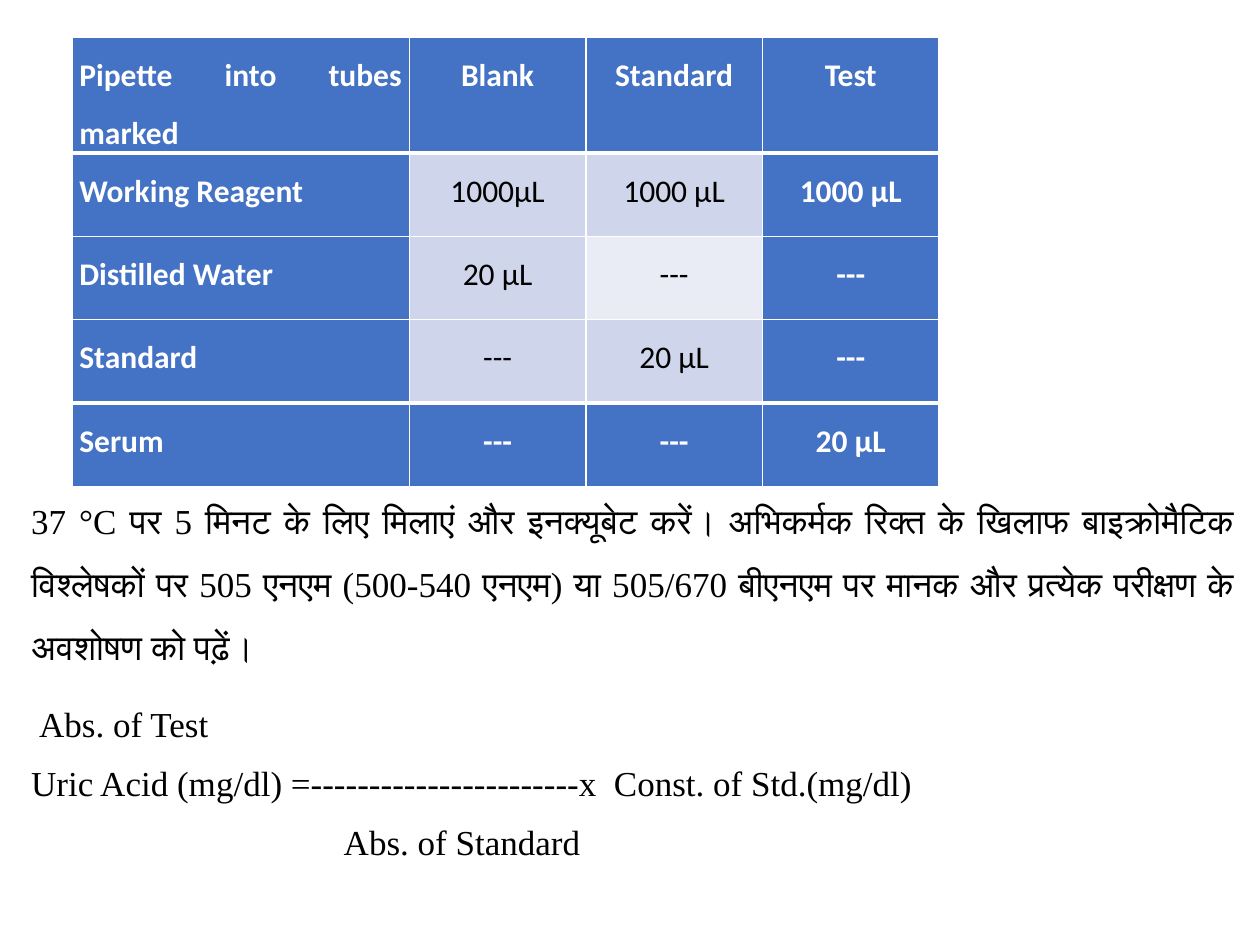
from dataclasses import dataclass

from lxml.etree import SubElement
from pptx import Presentation
from pptx.dml.color import RGBColor
from pptx.enum.text import MSO_ANCHOR, PP_ALIGN as Align
from pptx.oxml.ns import qn
from pptx.slide import Slide
from pptx.util import Cm, Pt

COLORS = {
    "header": "4472C4",
    "band": "CFD5EA",
    "plain": "E9EBF5",
    "white": "FFFFFF",
    "black": "000000",
}

ASSAY_ROWS = [
    ["Pipette into tubes marked", "Blank", "Standard", "Test"],
    ["Working Reagent", "1000µL", "1000 µL", "1000 µL"],
    ["Distilled Water", "20 µL", "---", "---"],
    ["Standard", "---", "20 µL", "---"],
    ["Serum", "---", "---", "20 µL"],
]

INSTRUCTIONS = [
    ("37 °C पर 5 मिनट के लिए मिलाएं और इनक्यूबेट करें। अभिकर्मक रिक्त के खिलाफ "
     "बाइक्रोमैटिक विश्लेषकों पर 505 एनएम (500-540 एनएम) या 505/670 बीएनएम पर "
     "मानक और प्रत्येक परीक्षण के अवशोषण को पढ़ें।", 1.5, 0),
    ("Abs. of Test", 1.5, 0.16),
    ("Uric Acid (mg/dl) =-----------------------x  Const. of Std.(mg/dl)", 1.07, 0),
    ("Abs. of Standard", 1.07, 6.3),
]


@dataclass
class SlideBuilder:
    """Hold the style and the current slide, and add elements to it."""

    slide: Slide
    table_font: str = "Calibri"
    text_font: str = "Times New Roman"
    table_size: int = 18
    text_size: int = 20
    space_after: int = 8

    def style(self, paragraph, font, size, color, align, spacing, bold=False):
        paragraph.alignment = align
        paragraph.line_spacing = spacing
        paragraph.space_after = Pt(self.space_after)
        paragraph.font.name = font
        paragraph.font.size = Pt(size)
        paragraph.font.bold = bold
        paragraph.font.color.rgb = RGBColor.from_string(COLORS[color])

    def borders(self, cell, top, bottom):
        properties = cell._tc.get_or_add_tcPr()
        for side, width in (("L", 1), ("R", 1), ("T", top), ("B", bottom)):
            line = SubElement(properties, qn(f"a:ln{side}"), w=str(Pt(width)))
            fill = SubElement(line, qn("a:solidFill"))
            SubElement(fill, qn("a:srgbClr"), val=COLORS["white"])

    def cell(self, cell, text, fill, align, top, bottom):
        is_header = fill == "header"
        cell.margin_left = cell.margin_right = Cm(0.15)
        cell.margin_top = cell.margin_bottom = 0
        cell.vertical_anchor = MSO_ANCHOR.TOP
        self.borders(cell, top, bottom)
        cell.fill.solid()
        cell.fill.fore_color.rgb = RGBColor.from_string(COLORS[fill])
        paragraph = cell.text_frame.paragraphs[0]
        paragraph.text = text
        self.style(paragraph, self.table_font, self.table_size,
                   "white" if is_header else "black", align, 1.5, is_header)

    def table(self, rows, left, top, widths, row_height):
        last_row, last_column = len(rows) - 1, len(widths) - 1
        table = self.slide.shapes.add_table(
            len(rows), len(widths), Cm(left), Cm(top),
            Cm(sum(widths)), Cm(row_height * len(rows))).table
        table.last_row = table.first_col = table.last_col = True
        for column, width in zip(table.columns, widths):
            column.width = Cm(width)
        for i, texts in enumerate(rows):
            table.rows[i].height = Cm(row_height)
            top_width = 3 if i in (1, last_row) else 1
            bottom_width = 3 if i in (0, last_row - 1) else 1
            for j, text in enumerate(texts):
                if i in (0, last_row) or j in (0, last_column):
                    fill = "header"
                else:
                    fill = "plain" if (i, j) == (2, 2) else "band"
                align = Align.CENTER if j else Align.JUSTIFY
                self.cell(table.cell(i, j), text, fill, align, top_width, bottom_width)

    def text(self, lines, left, top, width, height):
        frame = self.slide.shapes.add_textbox(
            Cm(left), Cm(top), Cm(width), Cm(height)).text_frame
        frame.word_wrap = True
        for i, (text, spacing, indent) in enumerate(lines):
            paragraph = frame.add_paragraph() if i else frame.paragraphs[0]
            paragraph.text = text
            if indent:
                paragraph._p.get_or_add_pPr().set("marL", str(Cm(indent)))
            self.style(paragraph, self.text_font, self.text_size,
                       "black", Align.JUSTIFY, spacing)


def main():
    presentation = Presentation()
    presentation.slide_width, presentation.slide_height = Cm(25.4), Cm(19.05)
    builder = SlideBuilder(presentation.slides.add_slide(presentation.slide_layouts[6]))
    builder.table(ASSAY_ROWS, 1.45, 0.76, [6.8, 3.56, 3.56, 3.56], 1.68)
    builder.text(INSTRUCTIONS, 0.38, 9.53, 24.74, 8.03)
    presentation.save("out.pptx")


if __name__ == "__main__":
    main()
